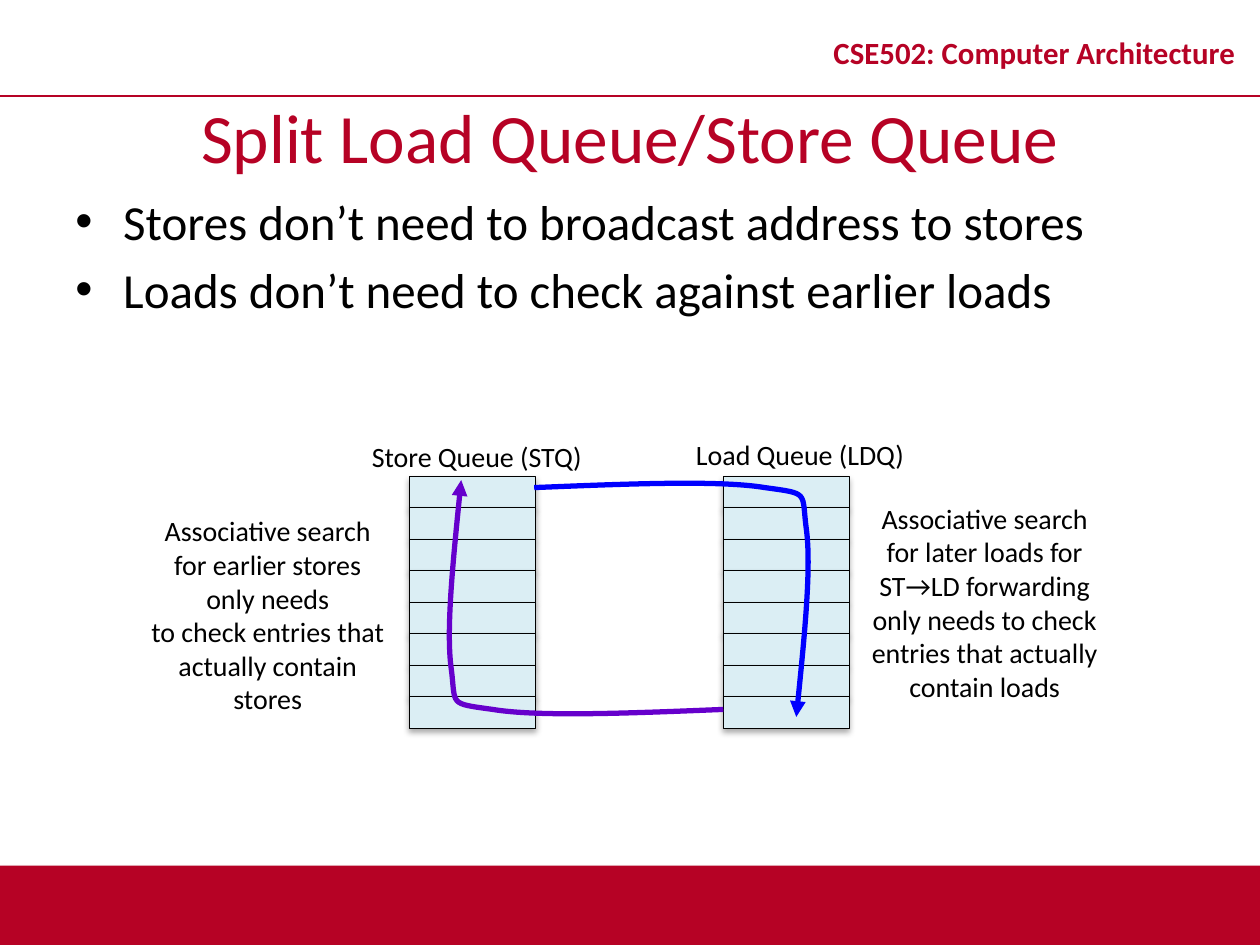
"""Build the Split Load Queue/Store Queue slide."""
from lxml.etree import SubElement
from pptx import Presentation
from pptx.dml.color import RGBColor
from pptx.enum.shapes import MSO_CONNECTOR, MSO_SHAPE
from pptx.enum.text import MSO_ANCHOR as Anchor, PP_ALIGN as Align
from pptx.oxml.ns import qn
from pptx.util import Inches, Pt

CRIMSON = RGBColor(0xB6, 0x02, 0x25)
BLACK = RGBColor(0, 0, 0)
PALE_BLUE = RGBColor(0xDB, 0xEE, 0xF4)
PURPLE = RGBColor(0x66, 0x00, 0xCC)
BLUE = RGBColor(0, 0, 0xFF)

HEADER = "CSE502: Computer Architecture"
TITLE = "Split Load Queue/Store Queue"
BULLETS = [
    "Stores don’t need to broadcast address to stores",
    "Loads don’t need to check against earlier loads",
]
LABELS = [
    ((2.78, 3.44, 2.01, 0.37), False, ["Store Queue (STQ)"]),
    ((5.35, 3.42, 2, 0.37), False, ["Load Queue (LDQ)"]),
    ((1.09, 4.03, 2.07, 1.7), True, [
        "Associative search for earlier stores only needs",
        "to check entries that actually contain stores",
    ]),
    ((6.81, 3.93, 2.01, 1.7), False, [
        "Associative search", "for later loads for", "ST→LD forwarding",
        "only needs to check", "entries that actually", "contain loads",
    ]),
]
QUEUE_LEFTS = (3.25, 5.74)
QUEUE_TOP, ENTRY_WIDTH, ENTRY_HEIGHT, ENTRY_COUNT = 3.78, 1, 0.25, 8
SEARCH_CURVE = [
    (4.24, 3.87),
    (4.98, 3.84), (5.71, 3.81), (6.07, 3.87),
    (6.43, 3.92), (6.36, 3.9), (6.4, 4.2),
    (6.44, 4.5), (6.38, 5.1), (6.32, 5.69),
]
SEARCHES = [(3.54, 180, PURPLE), (4.24, 0, BLUE)]


def add_text(page, place, lines, size, color=BLACK, align=Align.CENTER,
             anchor=Anchor.TOP, wrap=True, bold=False):
    box = page.shapes.add_textbox(*map(Inches, place))
    frame = box.text_frame
    frame.text = "\n".join(lines)
    frame.word_wrap = wrap
    frame.vertical_anchor = anchor
    for para in frame.paragraphs:
        para.alignment = align
        for span in para.runs:
            span.font.name = "Calibri"
            span.font.size = Pt(size)
            span.font.bold = bold
            span.font.color.rgb = color
    return frame


def add_block(page, place, fill, shadow):
    block = page.shapes.add_shape(MSO_SHAPE.RECTANGLE, *map(Inches, place))
    block.fill.solid()
    block.fill.fore_color.rgb = fill
    block.shadow.inherit = False
    opacity, blur, distance = shadow
    effects = block._element.spPr.find(qn("a:effectLst"))
    outer = SubElement(effects, qn("a:outerShdw"), blurRad=str(Pt(blur)),
                       dist=str(Pt(distance)), dir="5400000", rotWithShape="0")
    tint = SubElement(outer, qn("a:srgbClr"), val="000000")
    SubElement(tint, qn("a:alpha"), val=str(opacity * 1000))
    return block


def add_bullets(page):
    frame = add_text(page, (0.5, 1.47, 9, 5.35), BULLETS, 28, align=Align.LEFT)
    for index, para in enumerate(frame.paragraphs):
        para.space_before = Pt(5 if index else 0)
        props = para._p.get_or_add_pPr()
        props.set("marL", str(Inches(0.38)))
        props.set("indent", str(-Inches(0.38)))
        SubElement(props, qn("a:buFont"), typeface="Arial")
        SubElement(props, qn("a:buChar"), char="•")


def add_queue(page, left):
    for row in range(ENTRY_COUNT):
        place = (left, QUEUE_TOP + row * ENTRY_HEIGHT, ENTRY_WIDTH, ENTRY_HEIGHT)
        entry = add_block(page, place, PALE_BLUE, (32, 3.5, 2.2))
        entry.line.color.rgb = BLACK
        entry.line.width = Pt(0.75)


def add_search(page, left, rotation, color):
    start, *rest = [(Inches(x), Inches(y)) for x, y in SEARCH_CURVE]
    builder = page.shapes.build_freeform(*start)
    builder.add_line_segments(rest, close=False)
    arrow = builder.convert_to_shape()
    arrow.left = Inches(left)
    arrow.rotation = rotation
    arrow.fill.background()
    arrow.line.color.rgb = color
    arrow.line.width = Pt(3)
    arrow.shadow.inherit = False
    props = arrow._element.spPr
    SubElement(props.find(qn("a:ln")), qn("a:tailEnd"), type="triangle")
    outline = props.find(".//" + qn("a:path"))
    segments = outline.findall(qn("a:lnTo"))
    for first in range(0, len(segments), 3):
        curve = SubElement(outline, qn("a:cubicBezTo"))
        for segment in segments[first:first + 3]:
            curve.append(segment[0])
            outline.remove(segment)


def main():
    deck = Presentation()
    deck.slide_width, deck.slide_height = Inches(10), Inches(7.5)
    page = deck.slides.add_slide(deck.slide_layouts[6])

    footer = add_block(page, (0, 6.87, 10, 0.63), CRIMSON, (35, 3.1, 1.8))
    footer.line.fill.background()
    rule = page.shapes.add_connector(
        MSO_CONNECTOR.STRAIGHT, 0, Inches(0.76), Inches(10), Inches(0.76))
    rule.line.color.rgb = CRIMSON
    rule.line.width = Pt(1)
    SubElement(rule._element.spPr, qn("a:effectLst"))

    header = add_text(page, (6.42, 0.13, 3.58, 0.63), [HEADER], 17.6, CRIMSON,
                      anchor=Anchor.MIDDLE, bold=True)
    header.paragraphs[0].line_spacing = 0.8
    add_text(page, (0, 0.76, 10, 0.63), [TITLE], 39.6, CRIMSON,
             anchor=Anchor.MIDDLE)
    add_bullets(page)
    for left in QUEUE_LEFTS:
        add_queue(page, left)
    for place, wrap, lines in LABELS:
        add_text(page, place, lines, 16, wrap=wrap)
    for search in SEARCHES:
        add_search(page, *search)
    deck.save("out.pptx")


if __name__ == "__main__":
    main()
